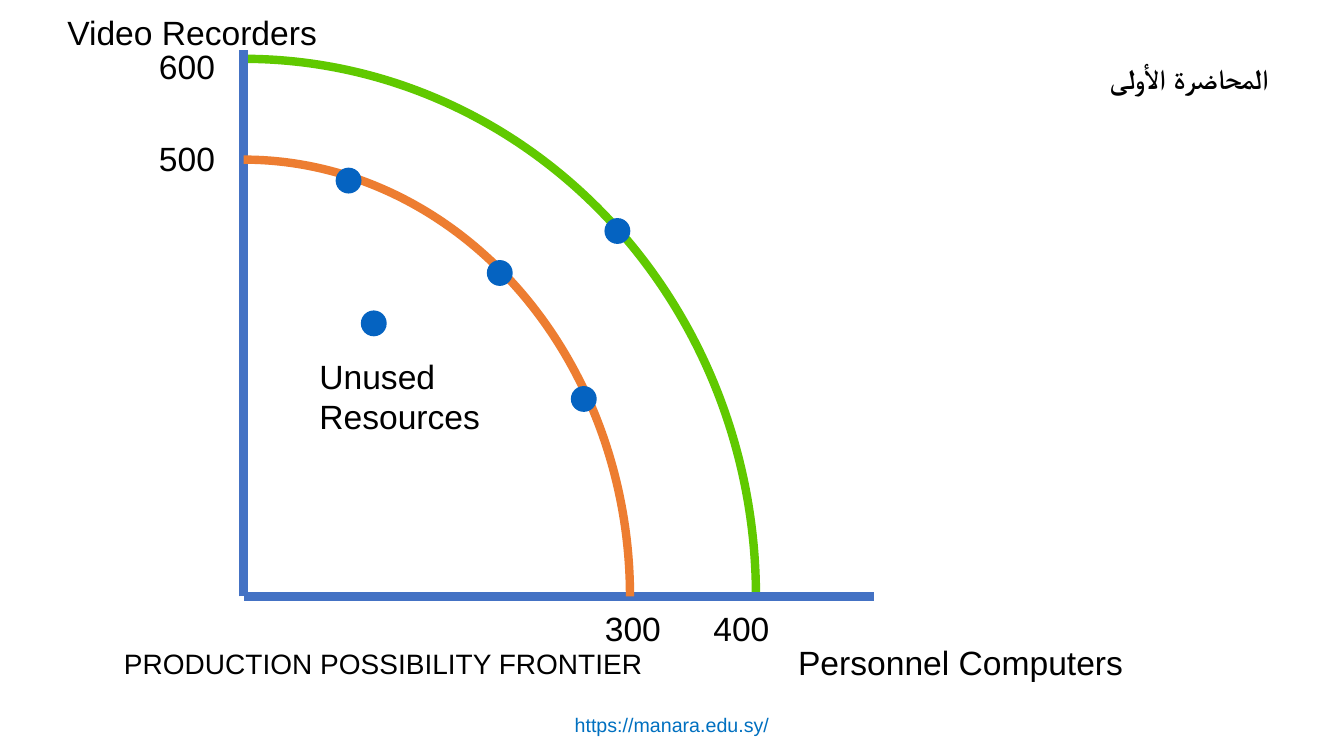
"""Builds a slide showing two production possibility frontiers."""
from dataclasses import dataclass

from lxml.etree import SubElement
from pptx import Presentation
from pptx.dml.color import RGBColor as Rgb
from pptx.enum.shapes import MSO_CONNECTOR as Link, MSO_SHAPE as Kind
from pptx.enum.text import MSO_AUTO_SIZE as Fit, PP_ALIGN as Align
from pptx.oxml.ns import qn
from pptx.util import Pt


@dataclass(frozen=True)
class Theme:
    """Colours, font and sizes in points."""
    ink: str = "000000"
    link: str = "0070C0"
    axis: str = "4472C4"
    inner: str = "ED7D31"
    outer: str = "60C900"
    dot: str = "0563C1"
    font: str = "Arial"
    big: int = 24
    mid: int = 20
    small: int = 14
    stroke: int = 6


T = Theme()
SIZE = (960, 540)
ZERO = (174, 426)
AXES = [(174, 36), (624, 426)]
INNER = (276, 312)
OUTER = (366, 384)
DOT = 17.5
DOTS = [(267, 231), (441, 165), (249, 129), (357, 195), (417, 285)]
LABELS = [
    ("Video Recorders", 41, 5, 205, 36, T.big),
    ("500", 106.5, 95, 55, 36, T.big),
    ("600", 106.5, 29, 55, 36, T.big),
    ("300", 425, 430.5, 55, 36, T.big),
    ("400", 502.5, 430.5, 55, 36, T.big),
    ("Unused\nResources", 221, 250.5, 137, 65, T.big),
    ("PRODUCTION POSSIBILITY FRONTIER", 81.5, 458.5, 388, 31, T.mid),
]
GOODS = ("Personnel Computers", 563, 455, 249, 36, T.big)
TITLE = ("المحاضرة الأولى", 785.5, 40.5, 135.5, 31.5, T.mid)
SITE = ("https://manara.edu.sy/", 395.5, 506, 169, 24.5, T.small)


def tint(text):
    return Rgb.from_string(text)


def paint(line, color, width):
    line.color.rgb = tint(color)
    line.width = Pt(width)


def write(slide, label, wrap=False, color=T.ink, bold=None, align=None):
    text, *box, size = label
    frame = slide.shapes.add_textbox(*map(Pt, box)).text_frame
    frame.text = text
    frame.word_wrap = wrap
    frame.auto_size = Fit.SHAPE_TO_FIT_TEXT
    for para in frame.paragraphs:
        para.alignment = align
        for run in para.runs:
            font = run.font
            font.name, font.size, font.bold = T.font, Pt(size), bold
            font.color.rgb = tint(color)


def draw_axis(slide, end):
    axis = slide.shapes.add_connector(Link.STRAIGHT, *map(Pt, ZERO + end))
    paint(axis.line, T.axis, T.stroke)
    SubElement(axis.element.spPr, qn("a:effectLst"))


def draw_curve(slide, radii, color):
    (x, y), (wide, high) = ZERO, radii
    form = slide.shapes.build_freeform(Pt(x), Pt(y - high))
    form.add_line_segments([(Pt(x + wide), Pt(y))], close=False)
    curve = form.convert_to_shape()
    curve.shadow.inherit = False
    curve.fill.background()
    paint(curve.line, color, T.stroke)
    step = next(curve.element.iter(qn("a:lnTo")))
    track = step.getparent()
    track.remove(step)
    SubElement(track, qn("a:arcTo"), wR=str(Pt(wide)), hR=str(Pt(high)),
               stAng="16200000", swAng="5400000")


def draw_dot(slide, x, y):
    box = (x - DOT / 2, y - DOT / 2, DOT, DOT)
    dot = slide.shapes.add_shape(Kind.OVAL, *map(Pt, box))
    dot.shadow.inherit = False
    dot.fill.solid()
    dot.fill.fore_color.rgb = tint(T.dot)
    paint(dot.line, T.dot, 1)


def main():
    deck = Presentation()
    deck.slide_width, deck.slide_height = map(Pt, SIZE)
    slide = deck.slides.add_slide(deck.slide_layouts[6])
    write(slide, SITE, wrap=True, color=T.link, align=Align.CENTER)
    draw_curve(slide, OUTER, T.outer)
    for end in AXES:
        draw_axis(slide, end)
    draw_curve(slide, INNER, T.inner)
    for spot in DOTS:
        draw_dot(slide, *spot)
    for label in LABELS:
        write(slide, label)
    write(slide, GOODS, wrap=True)
    write(slide, TITLE, wrap=True, bold=True)
    deck.save("out.pptx")


if __name__ == "__main__":
    main()
